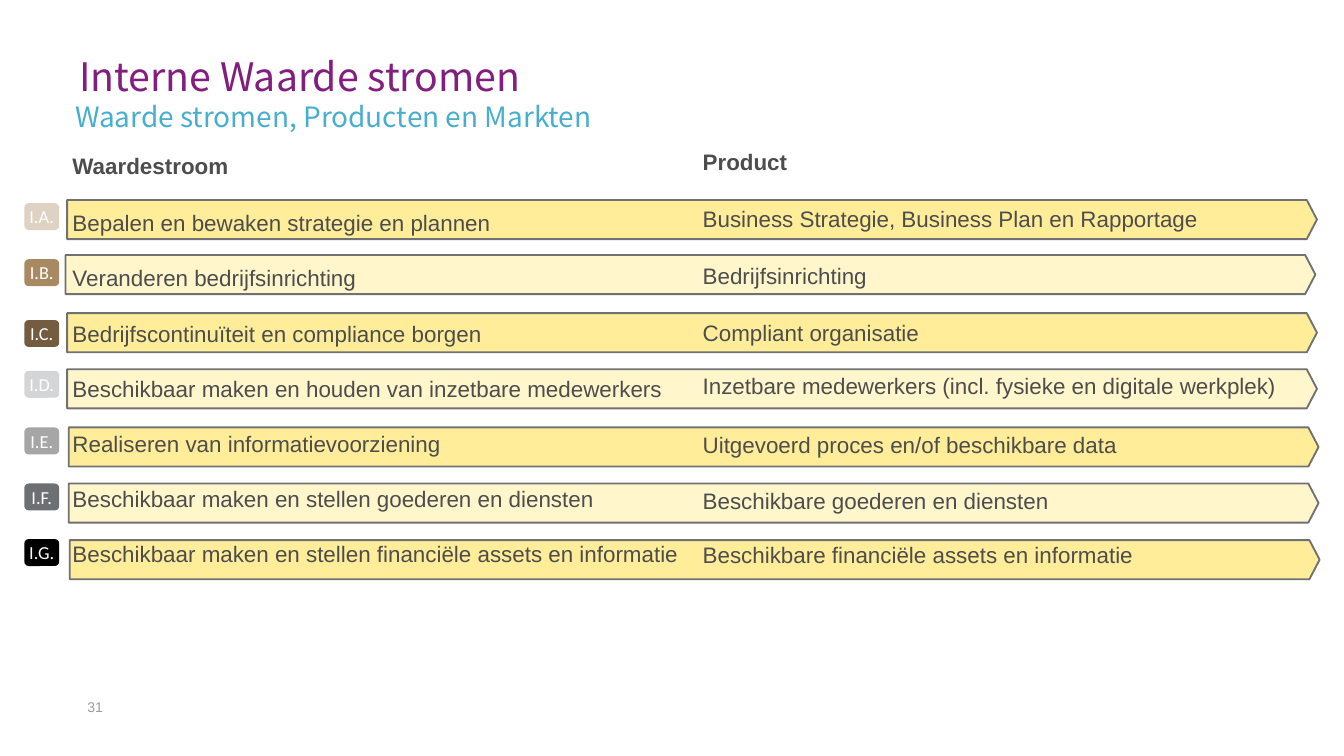
"""Build the slide listing internal value streams and their products."""
from pptx import Presentation
from pptx.dml.color import RGBColor
from pptx.enum.shapes import MSO_SHAPE
from pptx.enum.text import MSO_ANCHOR, MSO_AUTO_SIZE, PP_ALIGN
from pptx.util import Cm, Pt
from lxml.etree import SubElement
from pptx.oxml.ns import qn

ROWS = [
    ("I.A.", "DED2C3", 3.84, 1.27, 3.78),
    ("I.B.", "A98962", 4.9, 1.24, 4.82),
    ("I.C.", "735C3F", 6.05, 1.27, 5.92),
    ("I.D.", "D4D5D6", 7.01, 1.27, 6.98),
    ("I.E.", "A6A6A6", 8.08, 1.3, 8.08),
    ("I.F.", "6D7073", 9.14, 1.3, 9.14),
    ("I.G.", "000000", 10.19, 1.32, 10.21),
]
STREAMS = [
    "Bepalen en bewaken strategie en plannen",
    "Veranderen bedrijfsinrichting",
    "Bedrijfscontinuïteit en compliance borgen",
    "Beschikbaar maken en houden van inzetbare medewerkers",
    "Realiseren van informatievoorziening",
    "Beschikbaar maken en stellen goederen en diensten",
    "Beschikbaar maken en stellen financiële assets en informatie",
]
PRODUCTS = [
    ("Business Strategie, Business Plan en Rapportage", 4.5, 4.5),
    ("Bedrijfsinrichting", 4.5, 4.5),
    ("Compliant organisatie", 4.5, 2),
    ("Inzetbare medewerkers (incl. fysieke en digitale werkplek)", 4.5, 2),
    ("Uitgevoerd proces en/of beschikbare data", 8, 4.5),
    ("Beschikbare goederen en diensten", 4, 4.5),
    ("Beschikbare financiële assets en informatie", 3, 4.5),
]


def color(value):
    return RGBColor.from_string(value)


class SlideBuilder:
    heading_font = "Noto Sans CJK TC"
    body_font = "Arial"
    badge_font = "Calibri"
    text_color = "4D4D4D"
    bar_fills = ("FFED99", "FFF6CC")
    bar_line = "707173"

    def __init__(self, slide):
        self.slide = slide

    def frame(self, shape, inset=0, anchor=MSO_ANCHOR.TOP):
        frame = shape.text_frame
        frame.word_wrap = True
        frame.auto_size = MSO_AUTO_SIZE.NONE
        frame.vertical_anchor = anchor
        frame.margin_left = frame.margin_right = 0
        frame.margin_top = frame.margin_bottom = Cm(inset)
        return frame

    def add_text(self, para, text, size, font, fill, bold=False, align=PP_ALIGN.LEFT):
        para.alignment = align
        span = para.add_run()
        span.text = text
        span.font.size = Pt(size)
        span.font.name = font
        span.font.bold = bold
        span.font.color.rgb = color(fill)

    def place(self, index, left, top, width, height):
        holder = self.slide.placeholders[index]
        holder.left, holder.top = Cm(left), Cm(top)
        holder.width, holder.height = Cm(width), Cm(height)
        self.slide.shapes._spTree.append(holder._element)
        return self.frame(holder)

    def title(self, text, left, top, width, height):
        para = self.place(0, left, top, width, height).paragraphs[0]
        para.line_spacing = Pt(28)
        self.add_text(para, text, 21, self.heading_font, "821E7D")

    def column(self, index, heading, lines, left, top, width, height):
        frame = self.place(index, left, top, width, height)
        for number, (text, before, after) in enumerate([(heading, 0, 4.5)] + lines):
            para = frame.add_paragraph() if number else frame.paragraphs[0]
            properties = para._p.get_or_add_pPr()
            properties.set("marL", "0")
            properties.set("indent", "0")
            SubElement(properties, qn("a:buNone"))
            para.line_spacing = 1.5
            para.space_before, para.space_after = Pt(before), Pt(after)
            self.add_text(para, text, 12, self.body_font, self.text_color, bold=number == 0)

    def label(self, text, left, top, width, height, size, font, fill, spacing=1.0):
        box = self.slide.shapes.add_textbox(Cm(left), Cm(top), Cm(width), Cm(height))
        para = self.frame(box).paragraphs[0]
        para.line_spacing = spacing
        self.add_text(para, text, size, font, fill)

    def shape(self, kind, left, top, width, height, fill):
        shape = self.slide.shapes.add_shape(kind, Cm(left), Cm(top), Cm(width), Cm(height))
        shape.shadow.inherit = False
        shape.fill.solid()
        shape.fill.fore_color.rgb = color(fill)
        return shape

    def bar(self, left, top, fill):
        bar = self.shape(MSO_SHAPE.PENTAGON, left, top, 23.62, 0.74, fill)
        bar.adjustments[0] = 0.26
        bar.line.color.rgb = color(self.bar_line)
        bar.line.width = Pt(1)

    def badge(self, text, top, fill):
        badge = self.shape(MSO_SHAPE.ROUNDED_RECTANGLE, 0.46, top, 0.66, 0.51, fill)
        badge.line.fill.background()
        para = self.frame(badge, 0.13, MSO_ANCHOR.MIDDLE).paragraphs[0]
        self.add_text(para, text, 9.8, self.badge_font, "FFFFFF", align=PP_ALIGN.CENTER)


def main():
    deck = Presentation()
    deck.slide_width, deck.slide_height = Cm(25.4), Cm(14.29)
    page = SlideBuilder(deck.slides.add_slide(deck.slide_layouts[3]))

    page.label("31", 1.65, 13.21, 0.99, 0.61, 7.5, page.body_font, "9E9C9E")
    for number, (code, fill, badge_top, bar_left, bar_top) in enumerate(ROWS):
        page.bar(bar_left, bar_top, page.bar_fills[number % 2])
        page.badge(code, badge_top, fill)

    page.column(2, "Product", PRODUCTS, 13.28, 2.54, 11.99, 9.47)
    streams = [(text, 4.5, 3.5) for text in STREAMS]
    page.column(1, "Waardestroom", streams, 1.37, 2.62, 18.72, 9.47)
    page.title("Interne Waarde stromen", 1.5, 0.89, 18.49, 0.99)
    page.label("Waarde stromen, Producten en Markten", 1.42, 1.75, 21.13, 0.61,
               15, page.heading_font, "48AED0", 1.2)
    deck.save("out.pptx")


if __name__ == "__main__":
    main()
